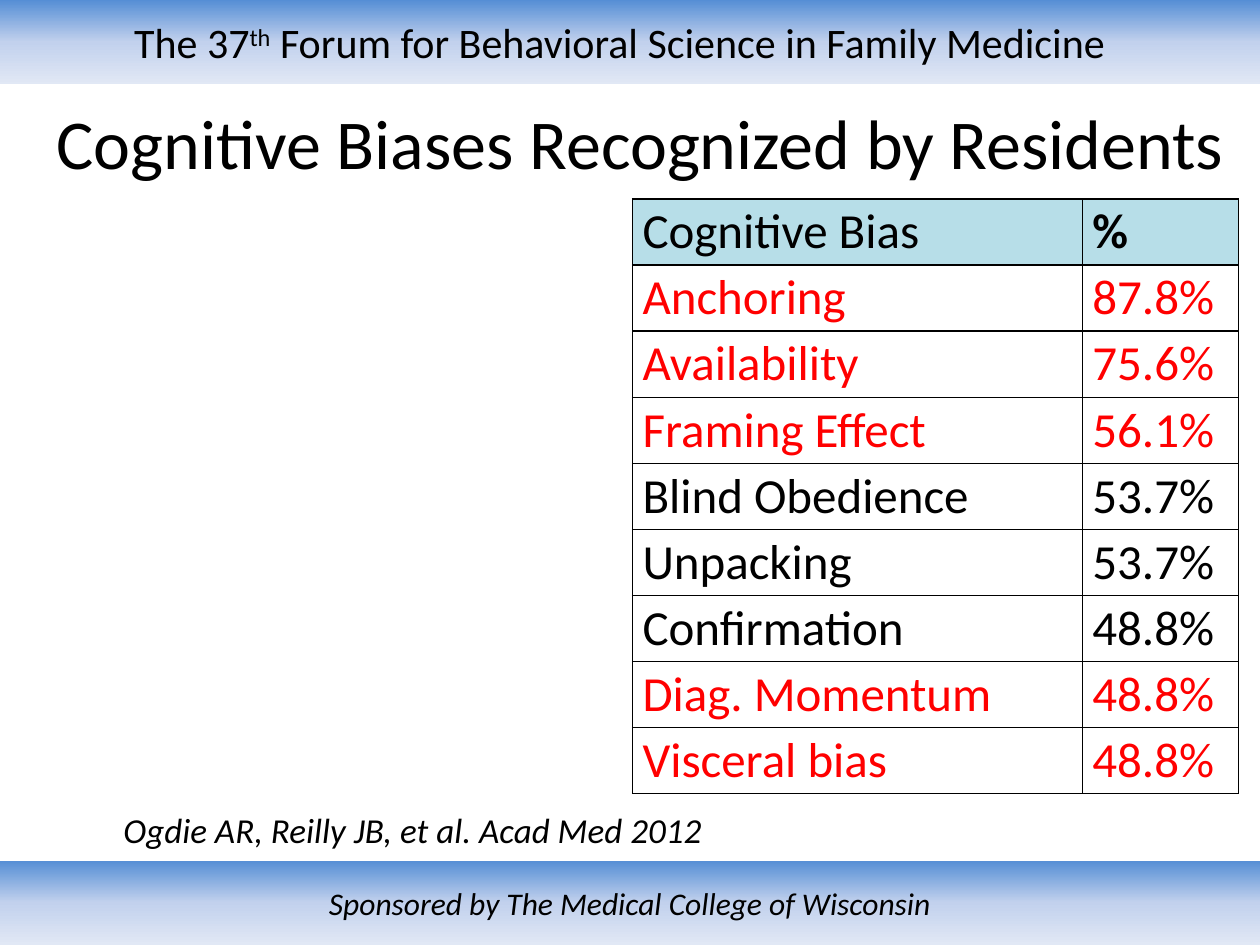
from lxml import etree
from pptx import Presentation
from pptx.dml.color import RGBColor
from pptx.enum.shapes import MSO_SHAPE
from pptx.enum.text import MSO_ANCHOR, PP_ALIGN
from pptx.oxml import parse_xml
from pptx.oxml.ns import nsdecls, qn
from pptx.util import Inches, Pt

RECT = MSO_SHAPE.RECTANGLE
MIDDLE = MSO_ANCHOR.MIDDLE
CENTER, LEFT, RIGHT = PP_ALIGN.CENTER, PP_ALIGN.LEFT, PP_ALIGN.RIGHT

WIDTH, HEIGHT = 10, 7.5
BAND_HEIGHT = 0.67
FONT = "Calibri"
BLACK, RED, HEADER_FILL = "000000", "FF0000", "B7DEE8"
BAND_STOPS = [(0, "558ED5"), (50, "C2D1ED"), (100, "E1E8F5")]

TABLE_LEFT, TABLE_TOP, TABLE_HEIGHT = 5.02, 1.58, 4.72
COLUMN_WIDTHS = [3.57, 1.24]
BIASES = [
    ("Cognitive Bias", "%", BLACK),
    ("Anchoring", "87.8%", RED),
    ("Availability", "75.6%", RED),
    ("Framing Effect", "56.1%", RED),
    ("Blind Obedience", "53.7%", BLACK),
    ("Unpacking", "53.7%", BLACK),
    ("Confirmation", "48.8%", BLACK),
    ("Diag. Momentum", "48.8%", RED),
    ("Visceral bias", "48.8%", RED),
]


def rgb(color):
    return RGBColor.from_string(color)


def write(tf, runs, size, align=LEFT, color=BLACK, **style):
    """Fill the first paragraph with (text, baseline percent) runs."""
    p = tf.paragraphs[0]
    p.alignment = align
    for text, baseline in runs:
        r = p.add_run()
        r.text = text
        for name, value in {"name": FONT, "size": Pt(size), **style}.items():
            setattr(r.font, name, value)
        r.font.color.rgb = rgb(color)
        if baseline:
            r._r.get_or_add_rPr().set("baseline", str(baseline * 1000))


def set_gradient(sp, stops):
    """Give the shape a top-to-bottom gradient with any number of stops."""
    sp.fill.gradient()
    fill = sp._element.spPr.find(qn("a:gradFill"))
    stop_xml = "".join(
        f'<a:gs pos="{pos * 1000}"><a:srgbClr val="{color}"/></a:gs>' for pos, color in stops
    )
    gradient = parse_xml(
        f'<a:gradFill {nsdecls("a")} rotWithShape="1"><a:gsLst>{stop_xml}</a:gsLst>'
        '<a:lin ang="5400000" scaled="0"/></a:gradFill>'
    )
    fill.getparent().replace(fill, gradient)


def add_band(s, top, runs, size, right_inset=0.1, **style):
    sp = s.shapes.add_shape(RECT, 0, Inches(top), Inches(WIDTH), Inches(BAND_HEIGHT))
    sp.shadow.inherit = False
    sp.line.fill.background()
    set_gradient(sp, BAND_STOPS)
    tf = sp.text_frame
    tf.vertical_anchor = MIDDLE
    tf.margin_right = Inches(right_inset)
    write(tf, runs, size, CENTER, **style)


def set_title(s, text):
    title = s.shapes.title
    box = {"left": 0.33, "top": 0.5, "width": 9.5, "height": 1.25}
    for name, value in box.items():
        setattr(title, name, Inches(value))
    title.text_frame.vertical_anchor = MIDDLE
    write(title.text_frame, [(text, 0)], 40, CENTER)


def set_borders(cell, color, width):
    tcPr = cell._tc.get_or_add_tcPr()
    for position, side in enumerate(("lnL", "lnR", "lnT", "lnB")):
        ln = etree.Element(qn(f"a:{side}"), w=str(Pt(width)))
        fill = etree.SubElement(ln, qn("a:solidFill"))
        etree.SubElement(fill, qn("a:srgbClr"), val=color)
        tcPr.insert(position, ln)


def format_cell(cell, text, color, is_header, bold):
    cell.vertical_anchor = MIDDLE
    cell.margin_left = cell.margin_right = Inches(0.08)
    cell.margin_top = cell.margin_bottom = 0
    if is_header:
        cell.fill.solid()
        cell.fill.fore_color.rgb = rgb(HEADER_FILL)
    else:
        cell.fill.background()
    set_borders(cell, BLACK, 1)
    write(cell.text_frame, [(text, 0)], 28, color=color, bold=bold)


def add_bias_table(s):
    table = s.shapes.add_table(
        len(BIASES), len(COLUMN_WIDTHS), Inches(TABLE_LEFT), Inches(TABLE_TOP),
        Inches(sum(COLUMN_WIDTHS)), Inches(TABLE_HEIGHT),
    ).table
    table.first_row = table.horz_banding = False
    for column, width in zip(table.columns, COLUMN_WIDTHS):
        column.width = Inches(width)
    for row, (*texts, color) in enumerate(BIASES):
        for col, text in enumerate(texts):
            format_cell(table.cell(row, col), text, color, row == 0, text == "%")


def add_citation(s, text):
    tf = s.shapes.add_textbox(0, Inches(6.37), Inches(5.67), Inches(0.44)).text_frame
    tf.word_wrap = True
    write(tf, [(text, 0)], 20, RIGHT, italic=True)


def main():
    prs = Presentation()
    prs.slide_width, prs.slide_height = Inches(WIDTH), Inches(HEIGHT)
    s = prs.slides.add_slide(prs.slide_layouts[5])
    forum = [("The 37", 0), ("th", 30), (" Forum for Behavioral Science in Family Medicine", 0)]
    sponsor = [("Sponsored by The Medical College of Wisconsin", 0)]
    add_band(s, 0, forum, 24, right_inset=0.26)
    add_band(s, HEIGHT - BAND_HEIGHT, sponsor, 18, italic=True)
    set_title(s, "Cognitive Biases Recognized by Residents")
    add_bias_table(s)
    add_citation(s, "Ogdie AR, Reilly JB, et al. Acad Med 2012")
    prs.save("out.pptx")


if __name__ == "__main__":
    main()
